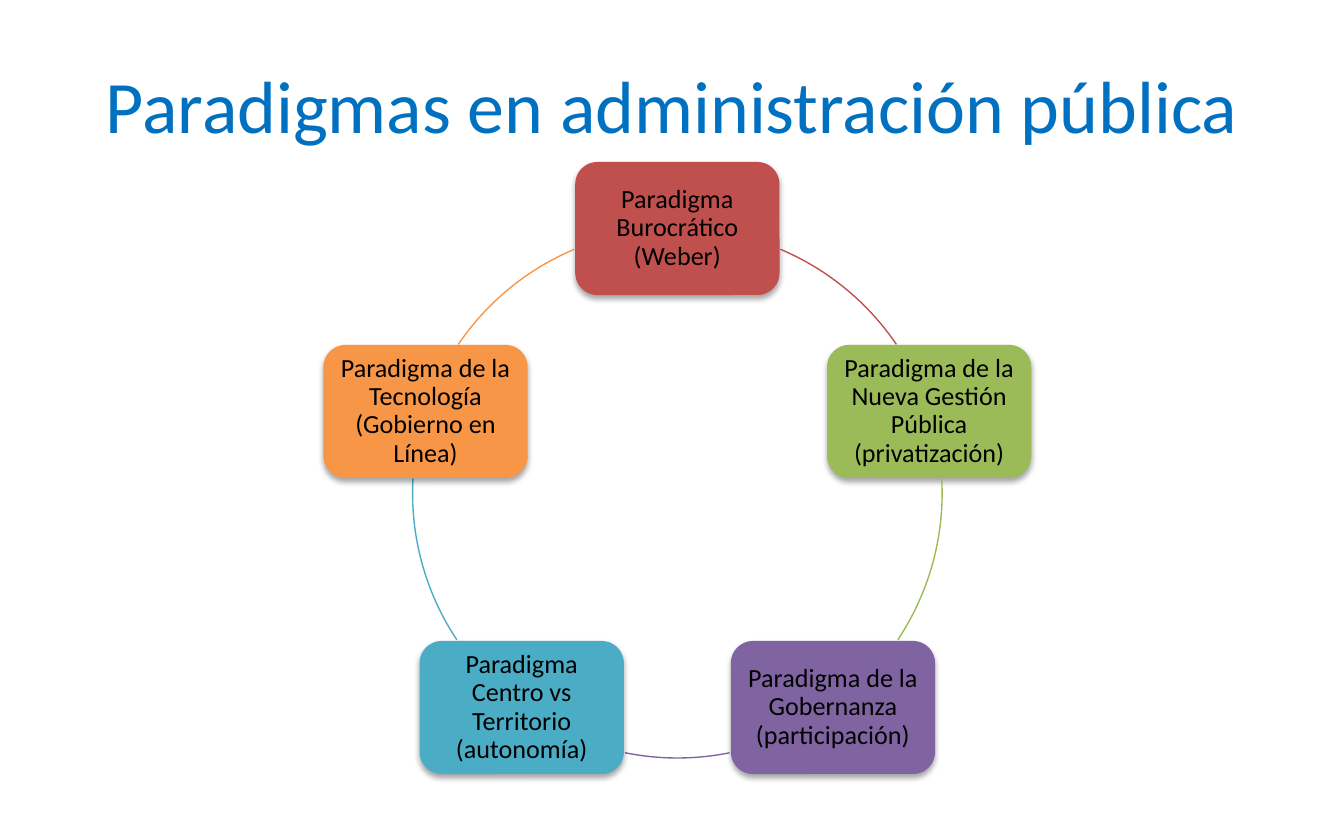
"""Build a slide with five public administration paradigms around a cycle."""
from math import cos, radians, sin

from lxml import etree
from pptx import Presentation
from pptx.dml.color import RGBColor
from pptx.enum.shapes import MSO_SHAPE
from pptx.enum.text import MSO_ANCHOR, PP_ALIGN
from pptx.oxml.ns import qn
from pptx.util import Inches, Pt

ROUNDED, ARC = MSO_SHAPE.ROUNDED_RECTANGLE, MSO_SHAPE.ARC
CENTER, MIDDLE = PP_ALIGN.CENTER, MSO_ANCHOR.MIDDLE
COLORS = {
    "title": "0070C0", "text": "000000", "red": "C0504D", "green": "9BBB59",
    "purple": "8064A2", "teal": "4BACC6", "orange": "F79646",
}
PARADIGMS = [
    ("Paradigma Burocrático (Weber)", "red", 292.9, 325.8),
    ("Paradigma de la Nueva Gestión Pública (privatización)", "green", 356.8, 33.6),
    ("Paradigma de la Gobernanza (participación)", "purple", 78.6, 101.4),
    ("Paradigma Centro vs Territorio (autonomía)", "teal", 146.4, 183.2),
    ("Paradigma de la Tecnología (Gobierno en Línea)", "orange", 214.2, 247.1),
]


def color(name):
    return RGBColor.from_string(COLORS[name])


def write(frame, text, size, color_name):
    frame.word_wrap = True
    frame.vertical_anchor = MIDDLE
    paragraph = frame.paragraphs[0]
    paragraph.text = text
    paragraph.alignment = CENTER
    paragraph.font.name = "Calibri"
    paragraph.font.size = Pt(size)
    paragraph.font.color.rgb = color(color_name)
    return paragraph


deck = Presentation()
deck.slide_width, deck.slide_height = Inches(10), Inches(6.25)
slide = deck.slides.add_slide(deck.slide_layouts[6])
shapes = slide.shapes

title = shapes.add_textbox(Inches(0.5), Inches(0.25), Inches(9), Inches(1.04))
write(title.text_frame, "Paradigmas en administración pública", 39.6, "title")

center_x, center_y, radius = Inches(5.04), Inches(3.67), Inches(1.97)
card_width, card_height = Inches(1.52), Inches(0.99)
step = 360 / len(PARADIGMS)

for index, (name, hue, start, end) in enumerate(PARADIGMS):
    angle = radians(index * step - 90)
    card = shapes.add_shape(
        ROUNDED,
        int(center_x + radius * cos(angle) - card_width / 2),
        int(center_y + radius * sin(angle) - card_height / 2),
        card_width, card_height)
    card.fill.solid()
    card.fill.fore_color.rgb = color(hue)
    card.line.fill.background()
    card.shadow.inherit = False
    effects = card._element.spPr.find(qn("a:effectLst"))
    shadow = etree.SubElement(effects, qn("a:outerShdw"), blurRad=str(Pt(3.1)),
                              dist=str(Pt(1.8)), dir="5400000", rotWithShape="0")
    shade = etree.SubElement(shadow, qn("a:srgbClr"), val=COLORS["text"])
    etree.SubElement(shade, qn("a:alpha"), val="35000")
    label = card.text_frame
    label.margin_left = label.margin_right = Inches(0.06)
    label.margin_top = label.margin_bottom = Inches(0.06)
    write(label, name, 14, "text").line_spacing = 0.9

    link = shapes.add_shape(ARC, center_x - radius, center_y - radius,
                            2 * radius, 2 * radius)
    link.adjustments[0], link.adjustments[1] = start * 0.6, end * 0.6
    link.fill.background()
    link.line.color.rgb = color(hue)
    link.line.width = Pt(0.75)
    link.shadow.inherit = False

deck.save("out.pptx")
